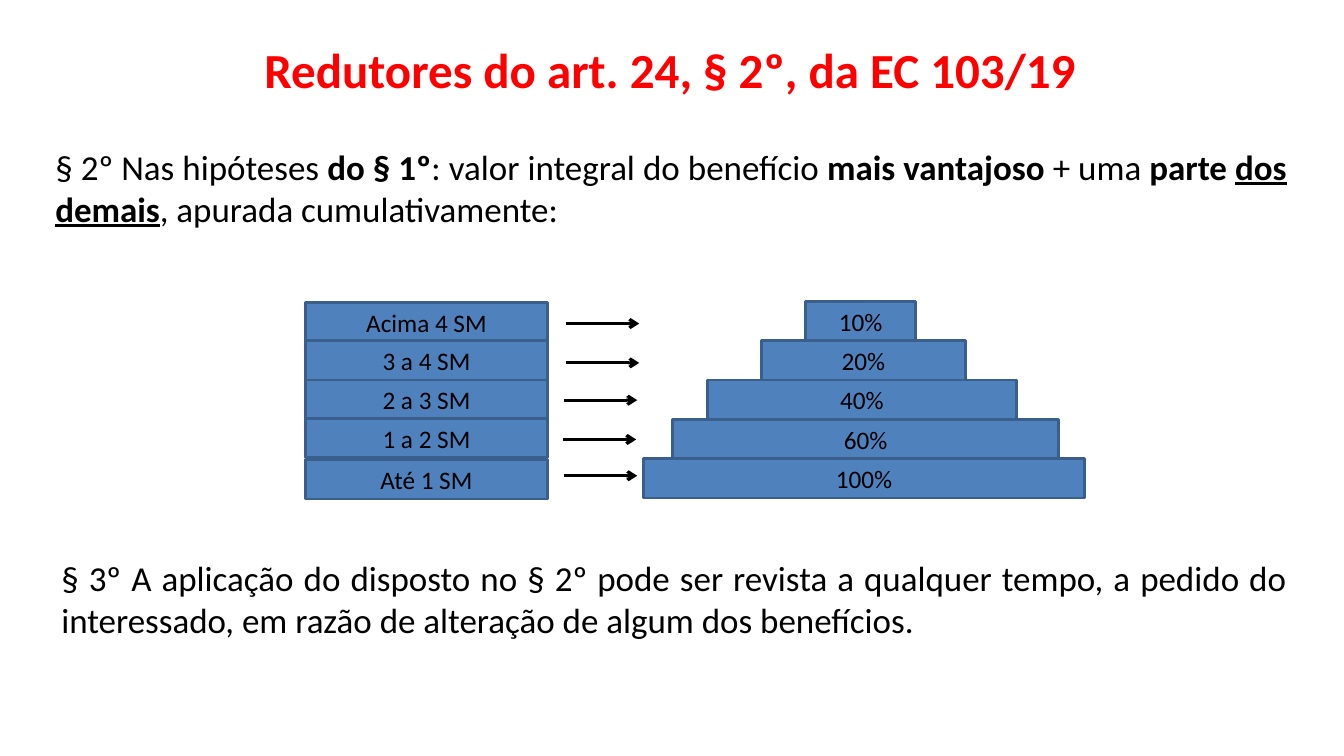
"""Build the slide on the benefit reducers of art. 24, § 2º, of EC 103/19."""
import pptx
import pptx.dml.color
import pptx.enum.shapes
import pptx.enum.text
import pptx.oxml
import pptx.oxml.ns
import pptx.util

Inches = pptx.util.Inches
Pt = pptx.util.Pt
RGBColor = pptx.dml.color.RGBColor
ALIGN = pptx.enum.text.PP_ALIGN
ANCHOR = pptx.enum.text.MSO_ANCHOR

BLACK = RGBColor(0x00, 0x00, 0x00)
RED = RGBColor(0xFF, 0x00, 0x00)
BLUE = RGBColor(0x4F, 0x81, 0xBD)
DARK_BLUE = RGBColor(0x3A, 0x5F, 0x8C)
FONT = "Calibri"

TITLE = [("Redutores do art. 24, § 2º, da EC 103/19", "b")]
PARAGRAPH_2 = [
    ("§ 2º Nas hipóteses ", ""),
    ("do § 1º", "b"),
    (": valor integral do benefício ", ""),
    ("mais vantajoso ", "b"),
    ("+ uma ", ""),
    ("parte ", "b"),
    ("dos demais", "bu"),
    (", apurada cumulativamente:", ""),
]
PARAGRAPH_3 = [
    ("§ 3º A aplicação do disposto no § 2º pode ser revista a qualquer tempo, "
     "a pedido do interessado, em razão de alteração de algum dos benefícios.", ""),
]

# Each band: label, share, label top, step left, step width, arrow left, arrow y
BANDS = [
    ("Acima 4 SM", "10%", 3.00, 7.99, 1.09, 5.61, 3.21),
    ("3 a 4 SM", "20%", 3.38, 7.55, 2.03, 5.61, 3.60),
    ("2 a 3 SM", "40%", 3.77, 7.02, 3.06, 5.59, 3.97),
    ("1 a 2 SM", "60%", 4.15, 6.67, 3.83, 5.58, 4.36),
    ("Até 1 SM", "100%", 4.56, 6.38, 4.38, 5.59, 4.72),
]
LABEL_LEFT, LABEL_WIDTH = 3.03, 2.4
STEP_TOP, STEP_PITCH, BAR_HEIGHT = 2.99, 0.39, 0.39
ARROW_LENGTH = 0.73


def write_text(sp, runs, size=18, color=BLACK, align=ALIGN.CENTER, anchor=ANCHOR.MIDDLE):
    tf = sp.text_frame
    tf.word_wrap = True
    tf.vertical_anchor = anchor
    p = tf.paragraphs[0]
    p.alignment = align
    for text, style in runs:
        r = p.add_run()
        r.text = text
        r.font.name = FONT
        r.font.size = Pt(size)
        r.font.color.rgb = color
        r.font.bold = "b" in style
        r.font.underline = "u" in style


def add_bar(s, left, top, width, text):
    sp = s.shapes.add_shape(pptx.enum.shapes.MSO_SHAPE.RECTANGLE, Inches(left),
                            Inches(top), Inches(width), Inches(BAR_HEIGHT))
    sp.shadow.inherit = False
    sp.fill.solid()
    sp.fill.fore_color.rgb = BLUE
    sp.line.color.rgb = DARK_BLUE
    sp.line.width = Pt(2)
    write_text(sp, [(text, "")])


def add_arrow(s, left, y):
    sp = s.shapes.add_connector(pptx.enum.shapes.MSO_CONNECTOR.STRAIGHT, Inches(left),
                                Inches(y), Inches(left + ARROW_LENGTH), Inches(y))
    sp.line.color.rgb = BLACK
    sp.line.width = Pt(2.25)
    tail = pptx.oxml.parse_xml(
        f'<a:tailEnd {pptx.oxml.ns.nsdecls("a")} type="arrow"/>')
    sp.line._get_or_add_ln().append(tail)
    sp._element.spPr.append(
        pptx.oxml.parse_xml(f'<a:effectLst {pptx.oxml.ns.nsdecls("a")}/>'))


def add_text(s, left, top, width, height, runs, **fmt):
    sp = s.shapes.add_textbox(Inches(left), Inches(top), Inches(width), Inches(height))
    write_text(sp, runs, **fmt)


def main():
    prs = pptx.Presentation()
    prs.slide_width = Inches(13.33)
    prs.slide_height = Inches(7.5)
    s = prs.slides.add_slide(prs.slide_layouts[6])

    body = {"size": 25, "align": ALIGN.JUSTIFY, "anchor": ANCHOR.TOP}
    add_text(s, 0.72, 0.21, 11.86, 0.94, TITLE, size=35, color=RED)
    add_text(s, 0.45, 1.39, 12.41, 0.94, PARAGRAPH_2, **body)
    for i, (label, share, top, left, width, arrow_left, arrow_y) in enumerate(BANDS):
        add_bar(s, LABEL_LEFT, top, LABEL_WIDTH, label)
        add_bar(s, left, STEP_TOP + i * STEP_PITCH, width, share)
        add_arrow(s, arrow_left, arrow_y)
    add_text(s, 0.51, 5.47, 12.35, 0.94, PARAGRAPH_3, **body)

    prs.save("out.pptx")


if __name__ == "__main__":
    main()
